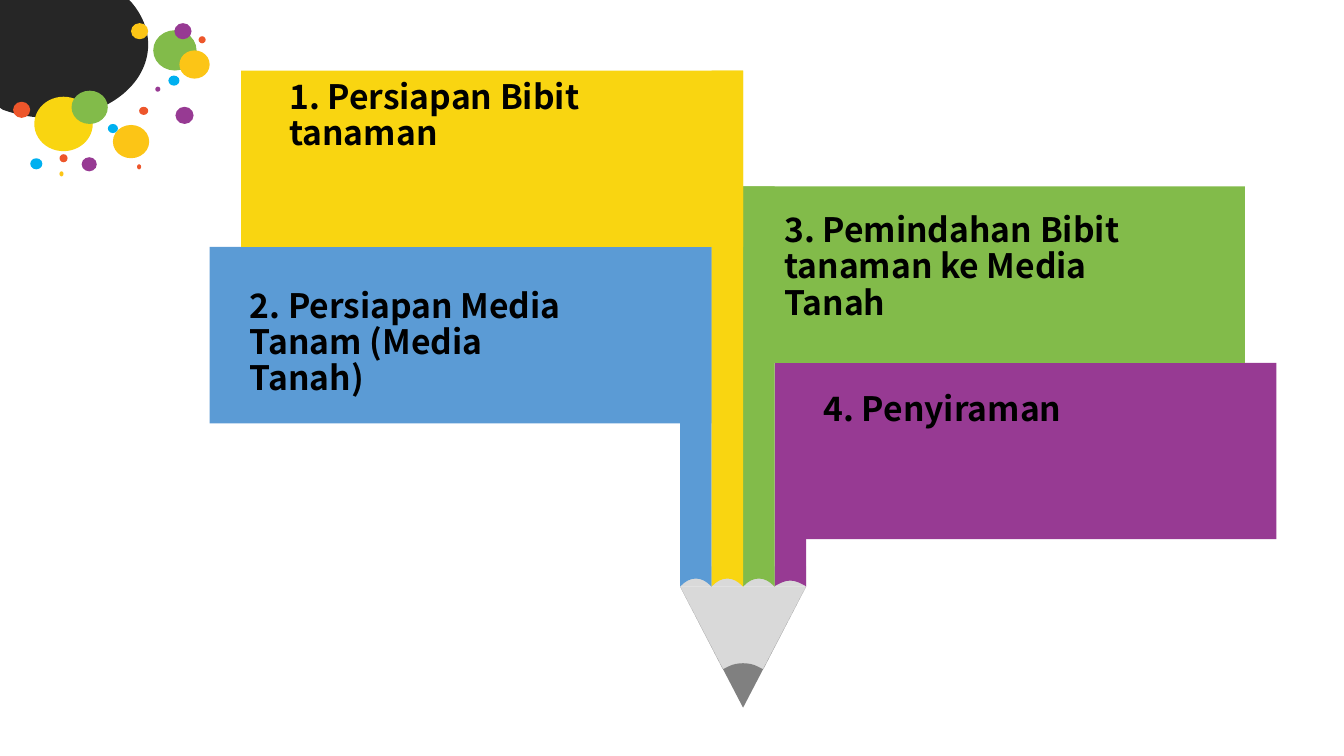
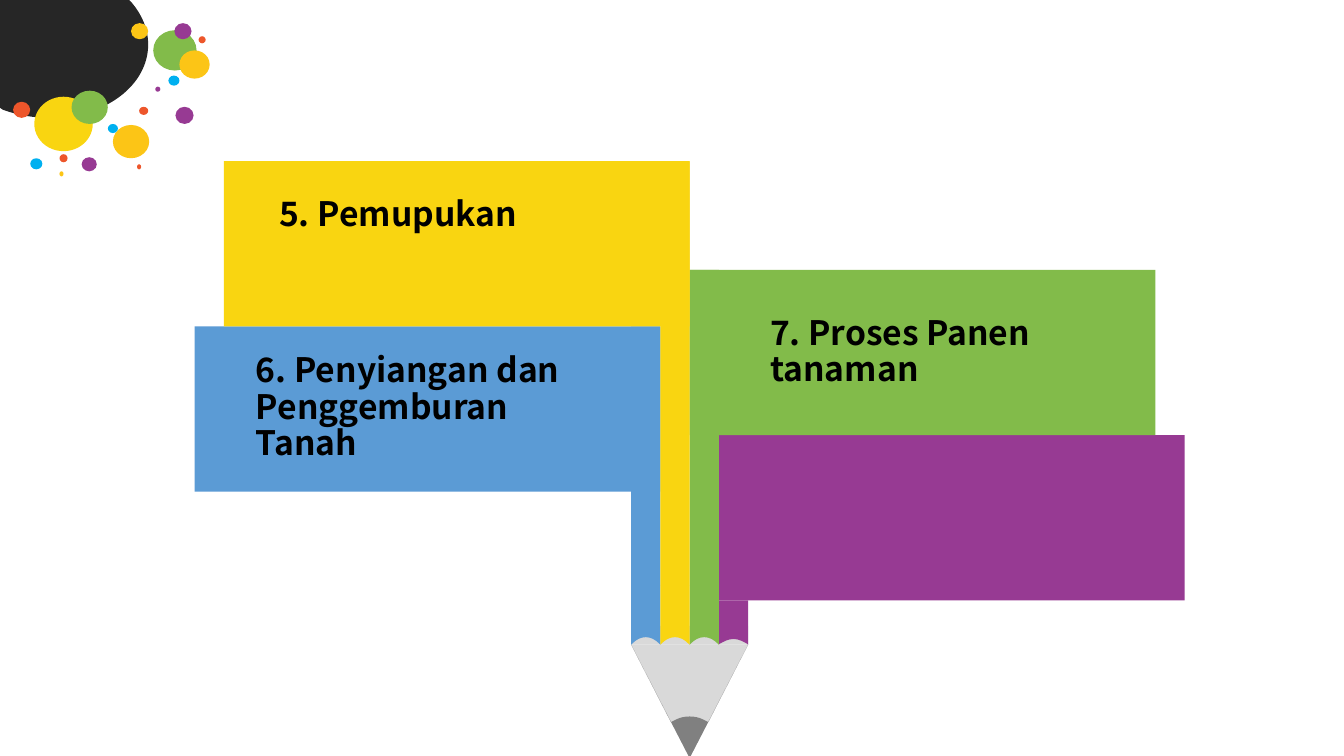
from lxml import etree
from pptx import Presentation
from pptx.dml.color import RGBColor
from pptx.enum.shapes import MSO_SHAPE as Preset
from pptx.oxml.ns import qn
from pptx.util import Inches, Pt

BLACK, CHARCOAL, WOOD, LEAD = "000000", "262626", "D9D9D9", "808080"
YELLOW, AMBER, GREEN, PURPLE = "F9D511", "FCC516", "82BB4A", "973A93"
RED, SKY, BLUE = "ED562B", "00B0F0", "5B9BD5"

# Outlines hold points (x, y) and curves (x1, y1, x2, y2, x, y)
CORNER = [
    (1.28, 0), (0, 0), (0, 1.07), (0.03, 1.09),
    (0.17, 1.14, 0.33, 1.17, 0.5, 1.17),
    (1.04, 1.17, 1.47, 0.85, 1.47, 0.44),
    (1.47, 0.29, 1.41, 0.15, 1.31, 0.03),
]

# Left, top, width, height
SPLASHES = [
    (RED, 0.13, 1.01, 0.17, 0.16), (YELLOW, 0.34, 0.96, 0.58, 0.54),
    (GREEN, 0.71, 0.9, 0.36, 0.33), (GREEN, 1.52, 0.3, 0.43, 0.4),
    (RED, 1.38, 1.06, 0.09, 0.08), (AMBER, 1.3, 0.23, 0.17, 0.16),
    (PURPLE, 1.73, 0.23, 0.17, 0.16), (RED, 1.97, 0.36, 0.07, 0.07),
    (AMBER, 1.78, 0.5, 0.3, 0.28), (SKY, 1.67, 0.75, 0.11, 0.1),
    (PURPLE, 1.54, 0.86, 0.05, 0.05), (PURPLE, 1.74, 1.06, 0.18, 0.17),
    (AMBER, 1.12, 1.24, 0.36, 0.33), (SKY, 1.07, 1.23, 0.1, 0.09),
    (RED, 1.36, 1.63, 0.04, 0.05), (PURPLE, 0.81, 1.56, 0.15, 0.14),
    (RED, 0.59, 1.53, 0.08, 0.08), (SKY, 0.3, 1.57, 0.12, 0.11),
    (AMBER, 0.59, 1.7, 0.04, 0.05),
]

# The pencil: four stems side by side, each carrying a banner
PENCIL_LEFT, PENCIL_W = 6.74, 1.25
STEM_W = PENCIL_W / 4
MIDDLE = PENCIL_LEFT + PENCIL_W / 2
STEM_END, PENCIL_TIP = 5.82, 7.02
BANNER_W, BANNER_H = 4.98, 1.75
LEAD_OUTLINE = [
    (PENCIL_LEFT, STEM_END), (MIDDLE - 0.2, 6.64), (MIDDLE - 0.14, 6.61),
    (MIDDLE - 0.1, 6.59, MIDDLE - 0.05, 6.58, MIDDLE, 6.58),
    (MIDDLE + 0.05, 6.58, MIDDLE + 0.1, 6.59, MIDDLE + 0.14, 6.61),
    (MIDDLE + 0.2, 6.64), (PENCIL_LEFT + PENCIL_W, STEM_END), (MIDDLE, PENCIL_TIP),
]
# Colour, stem column, banner top, top of the scalloped end, crest of the scallop
RIBBONS = [
    (PURPLE, 3, 3.6, 5.35, 5.76), (GREEN, 2, 1.85, 5.19, 5.74),
    (BLUE, 0, 2.45, 5.19, 5.74), (YELLOW, 1, 0.7, 5.19, 5.74),
]

# Pencil frame (left, top, width, height) and the steps (left, top, text)
SLIDES = [
    ((2.08, 0.7, 10.58, 6.32), [
        (2.77, 0.75, "1. Persiapan Bibit tanaman"),
        (2.38, 2.82, "2. Persiapan Media Tanam (Media Tanah)"),
        (8.07, 3.84, "4. Penyiraman"),
        (7.68, 2.07, "3. Pemindahan Bibit tanaman ke Media Tanah"),
    ]),
    ((1.93, 1.6, 9.82, 5.92), [
        (2.67, 1.91, "5. Pemupukan"),
        (2.44, 3.46, "6. Penyiangan dan Penggemburan Tanah"),
        (7.54, 3.09, "7. Proses Panen tanaman"),
    ]),
]


def build_outline(shapes, outline):
    """Draw all points as lines, then merge the three lines of each curve."""
    pairs = [[(Inches(piece[i]), Inches(piece[i + 1])) for i in range(0, len(piece), 2)]
             for piece in outline]
    points = [point for piece in pairs for point in piece]
    builder = shapes.build_freeform(*points[0], scale=1.0)
    builder.add_line_segments(points[1:], close=True)
    shape = builder.convert_to_shape()
    lines = iter(list(shape.element.iter(qn("a:lnTo"))))
    for piece in pairs[1:]:
        segments = [next(lines) for _ in piece]
        if len(segments) == 3:
            curve = etree.Element(qn("a:cubicBezTo"))
            segments[0].addprevious(curve)
            for segment in segments:
                curve.append(segment[0])
                segment.getparent().remove(segment)
    return shape


def draw(shapes, color, outline, box=None):
    """Add a flat shape: a preset in a box, or an outline of points and curves."""
    if box:
        shape = shapes.add_shape(outline, *map(Inches, box))
    else:
        shape = build_outline(shapes, outline)
    shape.shadow.inherit = False
    shape.fill.solid()
    shape.fill.fore_color.rgb = RGBColor.from_string(color)
    shape.line.fill.background()
    return shape


prs = Presentation()
prs.slide_width, prs.slide_height = Inches(13.33), Inches(7.5)
blank = prs.slide_layouts[6]

for frame, steps in SLIDES:
    slide = prs.slides.add_slide(blank)

    draw(slide.shapes, CHARCOAL, CORNER)
    splashes = slide.shapes.add_group_shape().shapes
    for color, *box in SPLASHES:
        draw(splashes, color, Preset.OVAL, box)

    pencil = slide.shapes.add_group_shape()
    parts = pencil.shapes
    cone_box = (PENCIL_LEFT, STEM_END, PENCIL_W, PENCIL_TIP - STEM_END)
    draw(parts, WOOD, Preset.ISOSCELES_TRIANGLE, cone_box).rotation = 180
    draw(parts, LEAD, LEAD_OUTLINE)
    draw(parts, WOOD, Preset.RECTANGLE, (PENCIL_LEFT, 5.62, PENCIL_W, 0.2))
    for color, column, top, end_top, crest in RIBBONS:
        left = PENCIL_LEFT + column * STEM_W
        right, center = left + STEM_W, left + STEM_W / 2
        shoulder, bend = STEM_END - 0.01, crest + 0.03
        draw(parts, color, [
            (left, end_top), (right, end_top), (right, STEM_END), (right - 0.01, shoulder),
            (right - 0.05, bend, center + 0.06, crest, center, crest),
            (center - 0.06, crest, left + 0.05, bend, left + 0.01, shoulder),
            (left, STEM_END),
        ])
        banner_left = right - BANNER_W if column < 2 else left
        draw(parts, color, Preset.RECTANGLE, (banner_left, top, BANNER_W, BANNER_H))
        if end_top > top + BANNER_H:
            draw(parts, color, Preset.RECTANGLE, (left, top, STEM_W, end_top - top))
    # Resizing the group scales every part with it
    for side, length in zip(("left", "top", "width", "height"), frame):
        setattr(pencil, side, Inches(length))

    for left, top, step in steps:
        label = slide.shapes.add_textbox(*map(Inches, (left, top, 3.59, 1.02)))
        label.text_frame.word_wrap = True
        paragraph = label.text_frame.paragraphs[0]
        paragraph.line_spacing = 0.9
        run = paragraph.add_run()
        run.text = step
        style = {"name": "Noto Sans CJK SC", "size": Pt(24), "bold": True}
        for attribute, value in style.items():
            setattr(run.font, attribute, value)
        run.font.color.rgb = RGBColor.from_string(BLACK)

prs.save("out.pptx")
